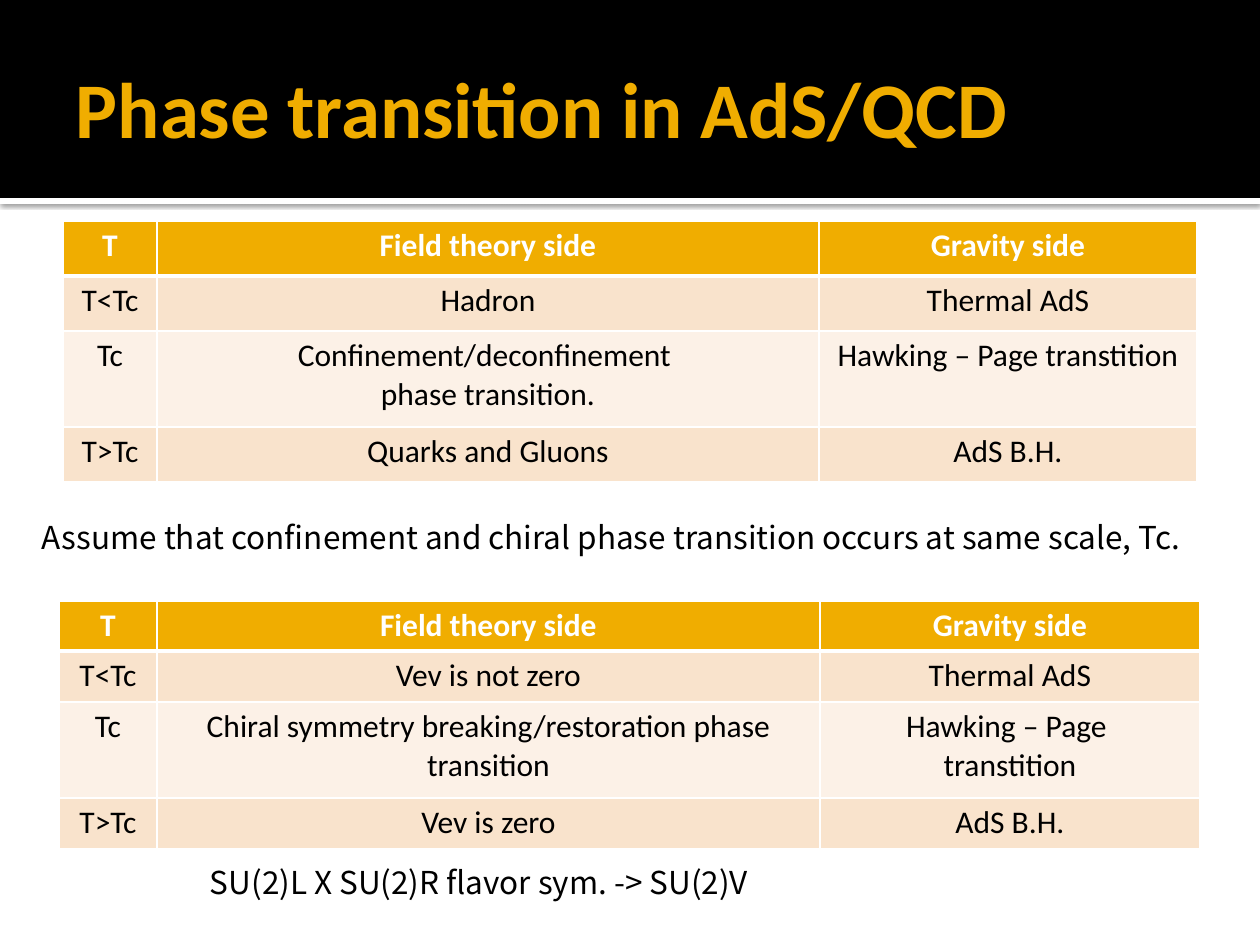
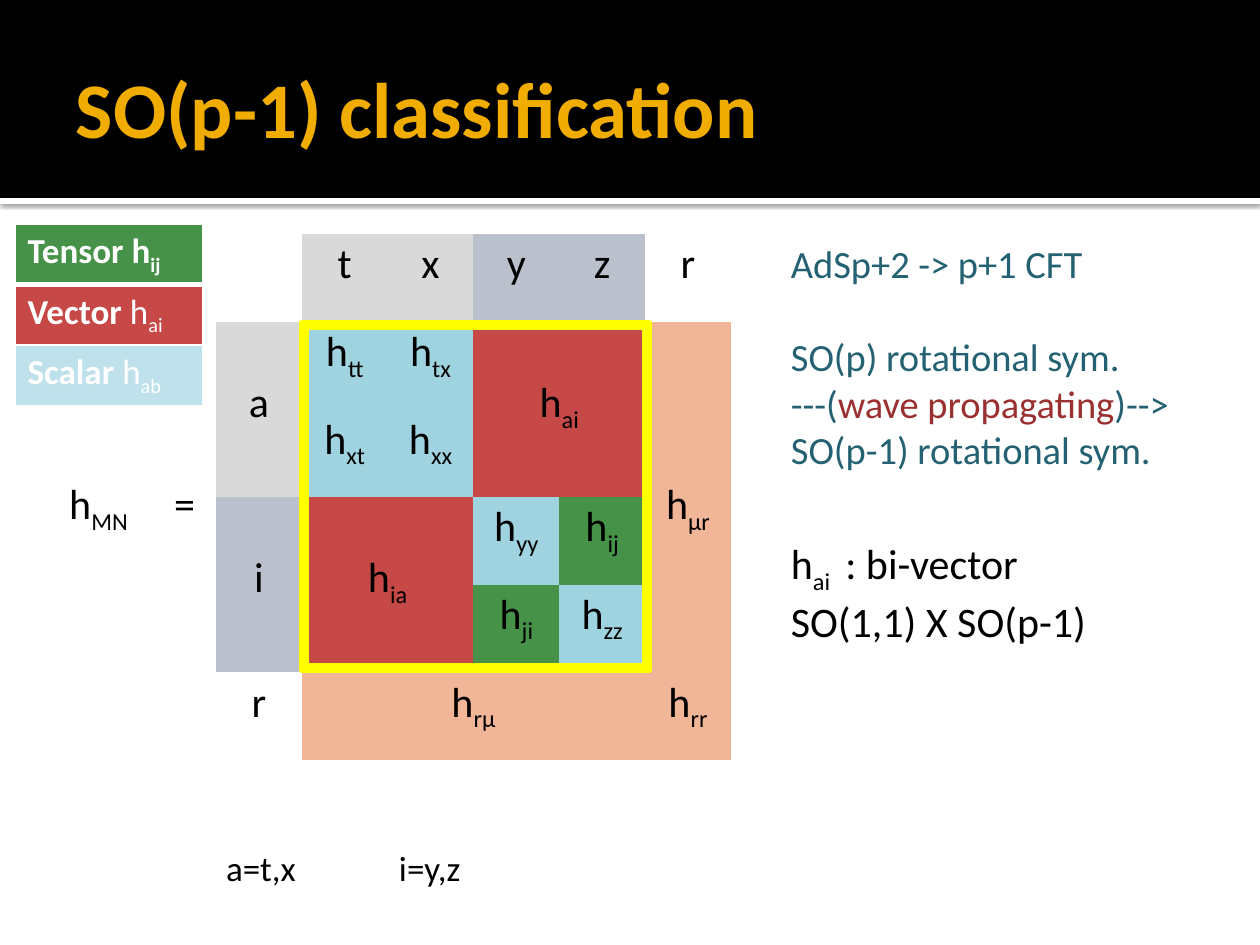
from lxml import etree
from pptx import Presentation
from pptx.dml.color import RGBColor
from pptx.enum.shapes import MSO_SHAPE
from pptx.enum.text import MSO_ANCHOR, PP_ALIGN
from pptx.oxml.ns import qn
from pptx.util import Pt

RECT, FRAME = MSO_SHAPE.RECTANGLE, MSO_SHAPE.FRAME
LEFT, CENTER = PP_ALIGN.LEFT, PP_ALIGN.CENTER
MIDDLE, TOP = MSO_ANCHOR.MIDDLE, MSO_ANCHOR.TOP
EMU_PER_PX = 914400 / 126
BODY, CJK = "Calibri", "Noto Sans CJK SC"
PLAIN_TABLE = "{2D5ABB26-0587-4C30-8999-92F81FD0307C}"
MATRIX_LINE = 51
LINE_BREAK = ("|", {})

COLORS = {
    "black": "000000", "white": "FFFFFF", "gold": "F0AD00",
    "peach": "F9E3CC", "cream": "FCF1E7", "gray": "D9D9D9",
    "slate": "BAC0CC", "scalar": "A0D3E0", "scalar_key": "BFE1EB",
    "vector": "C64847", "tensor": "479249", "radial": "F1B697",
    "teal": "246172", "wine": "9A3130", "yellow": "FFFF00",
}


def px(length):
    return round(length * EMU_PER_PX)


def rgb(name):
    return RGBColor.from_string(COLORS[name])


def child(parent, tag, **attributes):
    return etree.SubElement(parent, qn(tag), attributes)


def write(paragraph, runs, size, color="black", bold=False, font=BODY, align=LEFT):
    paragraph.alignment = align
    paragraph.font.size = Pt(size)
    paragraph.font.name = font
    if isinstance(runs, str):
        runs = [(runs, {})]
    for entry in runs:
        if entry is LINE_BREAK:
            paragraph.add_line_break()
            continue
        text, look = entry
        for level, piece in enumerate(text.split("_")):
            if not piece:
                continue
            run = paragraph.add_run()
            run.text = piece
            run.font.bold = look.get("bold", bold)
            run.font.color.rgb = rgb(look.get("color", color))
            if level:
                run.font._element.set("baseline", "-25000")


def write_lines(frame, lines, size, **look):
    for index, line in enumerate(lines):
        paragraph = frame.add_paragraph() if index else frame.paragraphs[0]
        write(paragraph, line, size, **look)


def set_insets(target, left, top, right, bottom):
    target.margin_left, target.margin_top = px(left), px(top)
    target.margin_right, target.margin_bottom = px(right), px(bottom)


def add_text(slide, box, lines, size, anchor=TOP, **look):
    frame = slide.shapes.add_textbox(*map(px, box)).text_frame
    frame.word_wrap = True
    frame.vertical_anchor = anchor
    set_insets(frame, 13, 6, 13, 6)
    write_lines(frame, lines, size, **look)
    return frame


def add_block(slide, kind, box, fill):
    block = slide.shapes.add_shape(kind, *map(px, box))
    block.shadow.inherit = False
    block.fill.solid()
    block.fill.fore_color.rgb = rgb(fill)
    block.line.fill.background()
    return block


def add_grid(slide, left, top, widths, heights):
    box = left, top, sum(widths), sum(heights)
    table = slide.shapes.add_table(len(heights), len(widths), *map(px, box)).table
    table.first_row = table.horz_banding = False
    table._tbl.tblPr.find(qn("a:tableStyleId")).text = PLAIN_TABLE
    for column, width in zip(table.columns, widths):
        column.width = px(width)
    for row, height in zip(table.rows, heights):
        row.height = px(height)
    return table


def paint(cell, fill):
    cell.fill.solid()
    cell.fill.fore_color.rgb = rgb(fill)


def rule_cell(cell, row):
    weights = {"L": 1, "R": 1, "T": 3 if row == 1 else 1, "B": 1 if row else 3}
    properties = cell._tc.get_or_add_tcPr()
    for side, weight in weights.items():
        line = child(properties, f"a:ln{side}", w=str(Pt(weight)))
        child(child(line, "a:solidFill"), "a:srgbClr", val=COLORS["white"])


def add_header(slide, title):
    strip = add_block(slide, RECT, (0, 198, 1260, 6), "white")
    effects = strip._element.spPr.find(qn("a:effectLst"))
    shadow = child(effects, "a:outerShdw", blurRad=str(Pt(2.5)), dist=str(Pt(0.8)),
                   dir="5400000", algn="t", rotWithShape="0")
    child(child(shadow, "a:srgbClr", val=COLORS["black"]), "a:alpha", val="60000")
    add_block(slide, RECT, (0, 0, 1260, 198), "black")
    add_text(slide, (63, 21, 1134, 173), [title], 45, MIDDLE, color="gold", bold=True)


def add_theory_table(slide, left, top, widths, heights, body):
    table = add_grid(slide, left, top, widths, heights)
    for r, row in enumerate([("T", "Field theory side", "Gravity side"), *body]):
        fill = "gold" if r == 0 else ("cream", "peach")[r % 2]
        for c, content in enumerate(row):
            cell = table.cell(r, c)
            rule_cell(cell, r)
            paint(cell, fill)
            set_insets(cell, 13, 6, 13, 6)
            lines = content.split("\n") if isinstance(content, str) else [content]
            write_lines(cell.text_frame, lines, 18, color="black" if r else "white",
                        bold=r == 0, align=CENTER)


def add_matrix(slide, box):
    left, top, width, height = box
    step = (width - 172) / 6
    table = add_grid(slide, left, top, [109, 63] + [step] * 6, [height / 6] * 6)
    for r in range(6):
        for c in range(8):
            paint(table.cell(r, c), "white")
    entries = [
        (0, 3, 1, 1, "t", "gray"), (0, 4, 1, 1, "x", "gray"),
        (0, 5, 1, 1, "y", "slate"), (0, 6, 1, 1, "z", "slate"),
        (0, 7, 1, 1, "r", "white"),
        (1, 0, 4, 1, "h_MN", "white"), (1, 1, 4, 1, "=", "white"),
        (1, 2, 2, 1, "a", "gray"), (3, 2, 2, 1, "i", "slate"),
        (1, 3, 1, 1, "h_tt", "scalar"), (1, 4, 1, 1, "h_tx", "scalar"),
        (2, 3, 1, 1, "h_xt", "scalar"), (2, 4, 1, 1, "h_xx", "scalar"),
        (1, 5, 2, 2, "h_ai", "vector"), (3, 3, 2, 2, "h_ia", "vector"),
        (3, 5, 1, 1, "h_yy", "scalar"), (3, 6, 1, 1, "h_ij", "tensor"),
        (4, 5, 1, 1, "h_ji", "tensor"), (4, 6, 1, 1, "h_zz", "scalar"),
        (1, 7, 4, 1, "h_μr", "radial"), (5, 2, 1, 1, "r", "white"),
        (5, 3, 1, 4, "h_rμ", "radial"), (5, 7, 1, 1, "h_rr", "radial"),
    ]
    for r, c, tall, wide, text, fill in entries:
        cell = table.cell(r, c)
        if tall * wide > 1:
            cell.merge(table.cell(r + tall - 1, c + wide - 1))
        paint(cell, fill)
        set_insets(cell, 11, 5 + MATRIX_LINE * (tall - 1), 11, 5)
        write(cell.text_frame.paragraphs[0], text, 24, align=CENTER)


def add_legend(slide, box):
    left, top, width, height = box
    entries = [
        ([("Tensor h_ij", {})], "tensor"),
        ([("Vector ", {}), ("h_ai", {"bold": False})], "vector"),
        ([("Scalar ", {}), ("h_ab", {"bold": False})], "scalar_key"),
    ]
    table = add_grid(slide, left, top, [width], [height / 3] * 3)
    for r, (runs, fill) in enumerate(entries):
        cell = table.cell(r, 0)
        rule_cell(cell, r)
        paint(cell, fill)
        write(cell.text_frame.paragraphs[0], runs, 20, "white", True)


def add_index_note(slide, box):
    note = add_text(slide, box, ["a=t,x\ti=y,z"], 20)
    tabs = etree.Element(qn("a:tabLst"))
    child(tabs, "a:tab", pos=str(px(173)), algn="l")
    note.paragraphs[0]._p.pPr.insert(0, tabs)


def add_symmetry_notes(slide, left, top, width):
    propagation = [("---(", {}), ("wave propagating", {"color": "wine"}), (")-->", {})]
    rotation = add_text(
        slide, (left, top, width, 246),
        ["AdSp+2 -> p+1 CFT", "SO(p) rotational sym.", propagation,
         "SO(p-1) rotational sym."], 22, color="teal")
    rotation.paragraphs[1].space_before = Pt(27)
    add_text(slide, (left, top + 298, width, 161),
             [[("h_ai ", {}), (" : bi-vector", {})], "SO(1,1) X SO(p-1)"], 24)


def add_highlight(slide, box):
    highlight = add_block(slide, FRAME, box, "white")
    highlight.adjustments[0] = 0.01
    highlight.line.color.rgb = rgb("yellow")
    highlight.line.width = Pt(3.78)


def build_phase_slide(slide):
    add_header(slide, "Phase transition in AdS/QCD")
    confinement = [("Confinement/deconfinement ", {}), LINE_BREAK,
                   ("phase transition.", {})]
    add_theory_table(slide, 63, 221, (94, 662, 378), (55, 55, 96, 55), [
        ("T<Tc", "Hadron", "Thermal AdS"),
        ("Tc", confinement, "Hawking – Page transtition"),
        ("T>Tc", "Quarks and Gluons", "AdS B.H."),
    ])
    add_theory_table(slide, 59, 601, (98, 663, 380), (50, 51, 96, 51), [
        ("T<Tc", "Vev is not zero", "Thermal AdS"),
        ("Tc", "Chiral symmetry breaking/restoration phase transition",
         "Hawking – Page \ntranstition"),
        ("T>Tc", "Vev is zero", "AdS B.H."),
    ])
    assumption = "Assume that confinement and chiral phase transition occurs at same scale, Tc."
    add_text(slide, (29, 512, 1211, 50), [assumption], 18, font=CJK)
    add_text(slide, (197, 857, 788, 50), ["SU(2)L X SU(2)R flavor sym. -> SU(2)V"],
             18, font=CJK)


def build_classification_slide(slide):
    add_header(slide, "SO(p-1) classification")
    add_matrix(slide, (44, 234, 687, 526))
    add_index_note(slide, (213, 840, 297, 55))
    add_legend(slide, (15, 224, 188, 180))
    add_symmetry_notes(slide, 778, 234, 427)
    add_highlight(slide, (302, 323, 347, 347))


def main():
    deck = Presentation()
    deck.slide_width, deck.slide_height = px(1260), px(945)
    for build in (build_phase_slide, build_classification_slide):
        build(deck.slides.add_slide(deck.slide_layouts[6]))
    deck.save("out.pptx")


if __name__ == "__main__":
    main()
